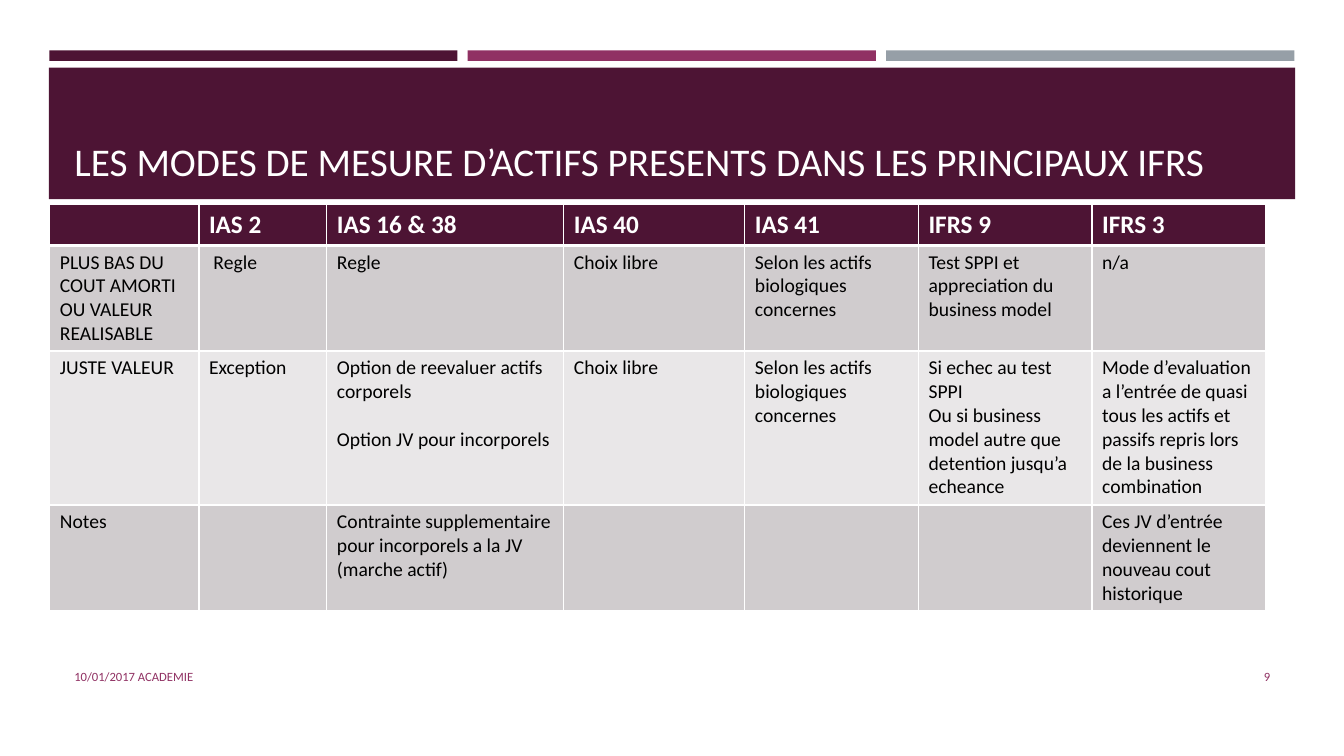
import pptx
import pptx.util
import pptx.dml.color
import pptx.enum.shapes
import pptx.enum.text
import pptx.oxml.ns
import lxml.etree

Pt = pptx.util.Pt
ALIGN = pptx.enum.text.PP_ALIGN
ANCHOR = pptx.enum.text.MSO_ANCHOR
COLORS = {"plum": "4D1434", "berry": "903163", "grey": "969FA7", "white": "FFFFFF",
          "black": "000000", "band_dark": "D0CCCE", "band_light": "E9E7E8"}
FONT = "Calibri"
LINE = 17  # height of one line of body text

COL_WIDTHS = [106.5, 91.4, 169.2, 129.4, 124, 124, 124]
ROW_HEIGHTS = [29.5, 75, 110, 75]
ROW_FILLS = ["plum", "band_dark", "band_light", "band_dark"]
BIOLOGICAL = "Selon les actifs biologiques concernes"
ROWS = [
    ["", "IAS 2", "IAS 16 & 38", "IAS 40", "IAS 41", "IFRS 9", "IFRS 3"],
    ["PLUS BAS DU COUT AMORTI OU VALEUR REALISABLE", " Regle", "Regle", "Choix libre",
     BIOLOGICAL, "Test SPPI et appreciation du business model", "n/a"],
    ["JUSTE VALEUR", "Exception",
     "Option de reevaluer actifs corporels\nOption JV pour incorporels",
     "Choix libre", BIOLOGICAL,
     "Si echec au test SPPI\nOu si business model autre que detention jusqu’a echeance",
     "Mode d’evaluation a l’entrée de quasi tous les actifs et passifs repris lors "
     "de la business combination"],
    ["Notes", "",
     "Contrainte supplementaire pour incorporels a la JV (marche actif)", "", "", "",
     "Ces JV d’entrée deviennent le nouveau cout historique"],
]


def rgb(name):
    return pptx.dml.color.RGBColor.from_string(COLORS[name])


def format_text(tf, size, color, bold=False, align=ALIGN.LEFT):
    for p in tf.paragraphs:
        p.alignment = align
        for r in p.runs:
            for name, value in {"name": FONT, "size": Pt(size), "bold": bold}.items():
                setattr(r.font, name, value)
            r.font.color.rgb = rgb(color)


def add_bar(s, x, y, w, h, color):
    sp = s.shapes.add_shape(pptx.enum.shapes.MSO_SHAPE.RECTANGLE,
                            Pt(x), Pt(y), Pt(w), Pt(h))
    sp.shadow.inherit = False
    sp.fill.solid()
    sp.fill.fore_color.rgb = rgb(color)
    sp.line.fill.background()


def set_title(s, text):
    sp = s.shapes.title
    for name, value in {"left": 46, "top": 55.5, "width": 868, "height": 80}.items():
        setattr(sp, name, Pt(value))
    tf = sp.text_frame
    tf.text = text
    for name, value in {"vertical_anchor": ANCHOR.BOTTOM, "word_wrap": True,
                        "auto_size": pptx.enum.text.MSO_AUTO_SIZE.NONE}.items():
        setattr(tf, name, value)
    format_text(tf, 28, "white")


def add_footer(s, x, w, text, align):
    tf = s.shapes.add_textbox(Pt(x), Pt(468.7), Pt(w), Pt(28.8)).text_frame
    tf.text = text
    tf.word_wrap = True
    tf.vertical_anchor = ANCHOR.MIDDLE
    format_text(tf, 9, "berry", align=align)


def set_borders(cell, widths):
    """Draw white borders; widths maps a side (L, R, T, B) to points."""
    tc_pr = cell._tc.get_or_add_tcPr()
    qn = pptx.oxml.ns.qn
    for side, width in widths.items():
        ln = lxml.etree.SubElement(tc_pr, qn("a:ln" + side), w=str(Pt(width)))
        fill = lxml.etree.SubElement(ln, qn("a:solidFill"))
        lxml.etree.SubElement(fill, qn("a:srgbClr"), val=COLORS["white"])


def add_measure_table(s):
    table = s.shapes.add_table(len(ROWS), len(COL_WIDTHS), Pt(35.6), Pt(145.8),
                               Pt(sum(COL_WIDTHS)), Pt(sum(ROW_HEIGHTS))).table
    for column, width in zip(table.columns, COL_WIDTHS):
        column.width = Pt(width)
    for i, (row, height) in enumerate(zip(table.rows, ROW_HEIGHTS)):
        row.height = Pt(height)
        header = i == 0
        for cell, text in zip(row.cells, ROWS[i]):
            set_borders(cell, {"L": 1, "R": 1, "T": 3 if i == 1 else 1,
                               "B": 3 if header else 1})
            cell.fill.solid()
            cell.fill.fore_color.rgb = rgb(ROW_FILLS[i])
            cell.text = text
            format_text(cell.text_frame, 18 if header else 14,
                        "white" if header else "black", bold=header)
    table.cell(2, 2).text_frame.paragraphs[1].space_before = Pt(LINE)


def main():
    prs = pptx.Presentation()
    prs.slide_width, prs.slide_height = Pt(960), Pt(540)
    s = prs.slides.add_slide(prs.slide_layouts[5])
    for i, color in enumerate(["plum", "berry", "grey"]):
        add_bar(s, 35.2 + i * 298.9, 36, 291.6, 7.5, color)
    add_bar(s, 34.9, 48.4, 890.3, 93.8, "plum")
    set_title(s, "LES MODES DE MESURE D’ACTIFS PRESENTS DANS LES PRINCIPAUX IFRS")
    # The title placeholder comes first in the tree, so lift it above its band.
    s.shapes._spTree.append(s.shapes.title._element)
    add_measure_table(s)
    add_footer(s, 46, 544, "10/01/2017 ACADEMIE", ALIGN.LEFT)
    add_footer(s, 831.6, 82.8, "9", ALIGN.RIGHT)
    prs.save("out.pptx")


if __name__ == "__main__":
    main()
